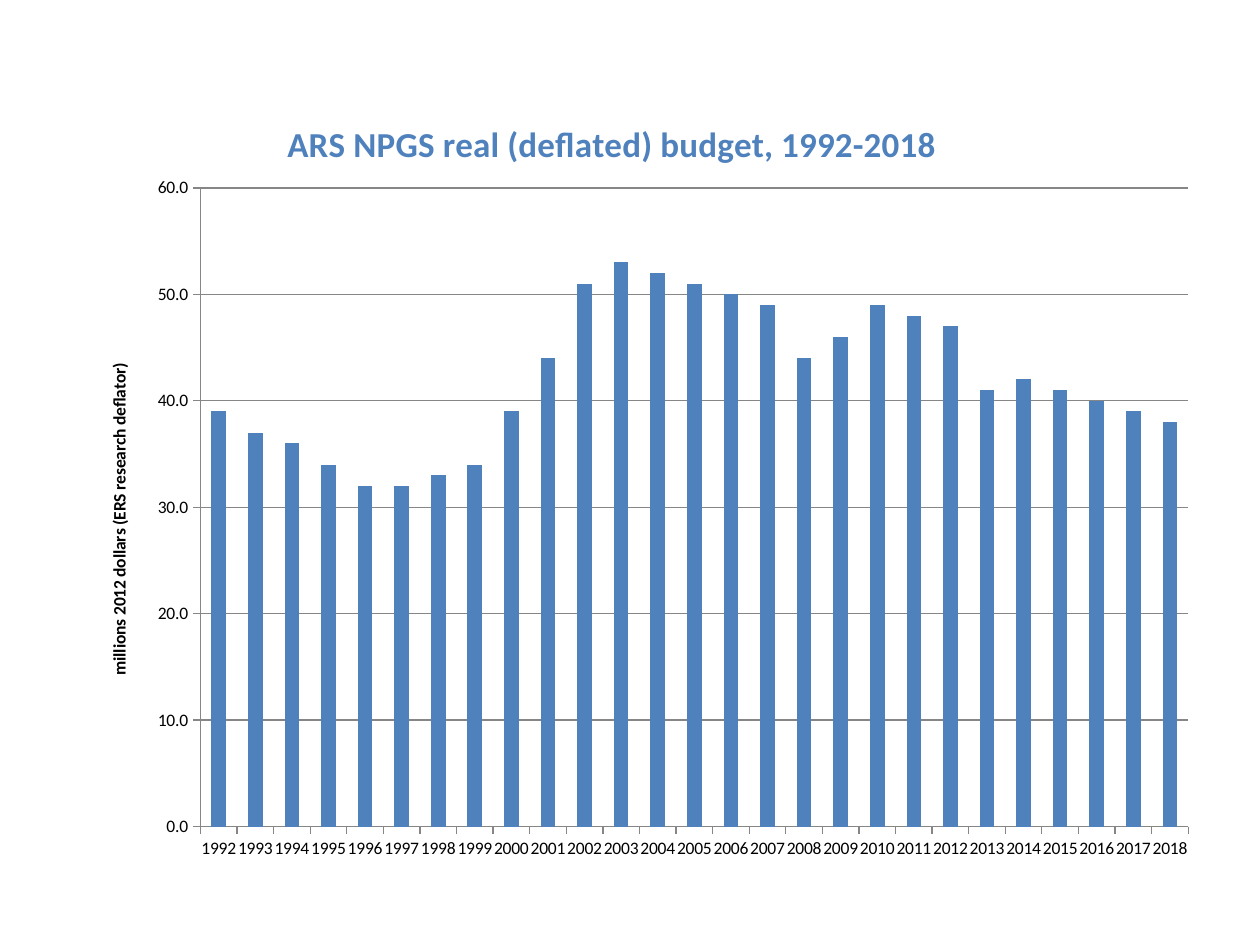
from dataclasses import dataclass

from lxml import etree
from pptx import Presentation
from pptx import util as u
from pptx.chart import data as chart_data
from pptx.dml.color import RGBColor
from pptx.enum import chart as ch
from pptx.oxml import ns


@dataclass(frozen=True)
class Theme:
    font: str = "Calibri"
    accent: RGBColor = RGBColor(0x4F, 0x81, 0xBD)
    ink: RGBColor = RGBColor(0, 0, 0)
    rule: RGBColor = RGBColor(0x86, 0x86, 0x86)
    title_size: u.Pt = u.Pt(20)
    label_size: u.Pt = u.Pt(10)
    rule_width: u.Pt = u.Pt(0.75)


@dataclass(frozen=True)
class Heading:
    text: str
    size: u.Pt
    color: RGBColor
    x: float
    y: float


THEME = Theme()
FIRST_YEAR = 1992
BUDGETS = (
    39, 37, 36, 34, 32, 32, 33, 34, 39,
    44, 51, 53, 52, 51, 50, 49, 44, 46,
    49, 48, 47, 41, 42, 41, 40, 39, 38,
)
BUDGET_HEADING = Heading("ARS NPGS real (deflated) budget, 1992-2018",
                         THEME.title_size, THEME.accent, 0.16, 0.05)
DOLLARS_HEADING = Heading("millions 2012 dollars (ERS research deflator)",
                          THEME.label_size, THEME.ink, 0, 0.36)


def place(parent, index: int, **settings) -> None:
    for old in parent.findall(ns.qn("c:layout")):
        parent.remove(old)
    layout = etree.Element(ns.qn("c:layout"))
    manual = etree.SubElement(layout, ns.qn("c:manualLayout"))
    for tag, value in settings.items():
        etree.SubElement(manual, ns.qn(f"c:{tag}")).set("val", str(value))
    parent.insert(index, layout)


def write_heading(title, heading: Heading) -> None:
    paragraph = title.text_frame.paragraphs[0]
    paragraph.add_run().text = heading.text
    font = paragraph.font
    font.name, font.size, font.bold = THEME.font, heading.size, True
    font.color.rgb = heading.color
    place(title._element, 1, xMode="edge", yMode="edge", x=heading.x, y=heading.y)


def draw_rule(line) -> None:
    line.color.rgb = THEME.rule
    line.width = THEME.rule_width


def style_axis(axis) -> None:
    axis.major_tick_mark = ch.XL_TICK_MARK.OUTSIDE
    axis.minor_tick_mark = ch.XL_TICK_MARK.NONE
    axis.tick_labels.font.size = THEME.label_size
    draw_rule(axis.format.line)


def add_budget_chart(slide) -> None:
    figures = chart_data.CategoryChartData(number_format="0.0")
    figures.categories = [str(FIRST_YEAR + i) for i in range(len(BUDGETS))]
    figures.add_series("Series 1", BUDGETS)
    budget = slide.shapes.add_chart(
        ch.XL_CHART_TYPE.COLUMN_CLUSTERED, u.Inches(0.83), u.Inches(0.58),
        u.Inches(8.75), u.Inches(6.33), figures).chart

    budget.has_legend = False
    budget.font.name = THEME.font
    budget.font.size = THEME.label_size
    budget.font.color.rgb = THEME.ink
    budget.has_title = True
    write_heading(budget.chart_title, BUDGET_HEADING)

    years, dollars = budget.category_axis, budget.value_axis
    for axis in (years, dollars):
        style_axis(axis)
    years.has_major_gridlines = False
    years._element.find(f"{ns.qn('c:txPr')}/{ns.qn('a:bodyPr')}").set("rot", "0")
    dollars.minimum_scale, dollars.maximum_scale, dollars.major_unit = 0, 60, 10
    dollars.has_major_gridlines = True
    draw_rule(dollars.major_gridlines.format.line)
    dollars.tick_labels.number_format = "0.0"
    dollars.tick_labels.number_format_is_linked = False
    dollars.has_title = True
    write_heading(dollars.axis_title, DOLLARS_HEADING)
    dollars.axis_title.text_frame._txBody.bodyPr.set("rot", "-5400000")
    dollars.axis_title.text_frame._txBody.bodyPr.set("vert", "horz")

    columns = budget.plots[0]
    columns.gap_width = 150
    columns.vary_by_categories = False
    fill = columns.series[0].format.fill
    fill.solid()
    fill.fore_color.rgb = THEME.accent
    place(columns._element.getparent(), 0, layoutTarget="inner", xMode="edge",
          yMode="edge", x=0.087, y=0.144, w=0.896, h=0.801)


def main() -> None:
    deck = Presentation()
    deck.slide_width, deck.slide_height = u.Inches(10), u.Inches(7.5)
    add_budget_chart(deck.slides.add_slide(deck.slide_layouts[6]))
    deck.save("out.pptx")


if __name__ == "__main__":
    main()
